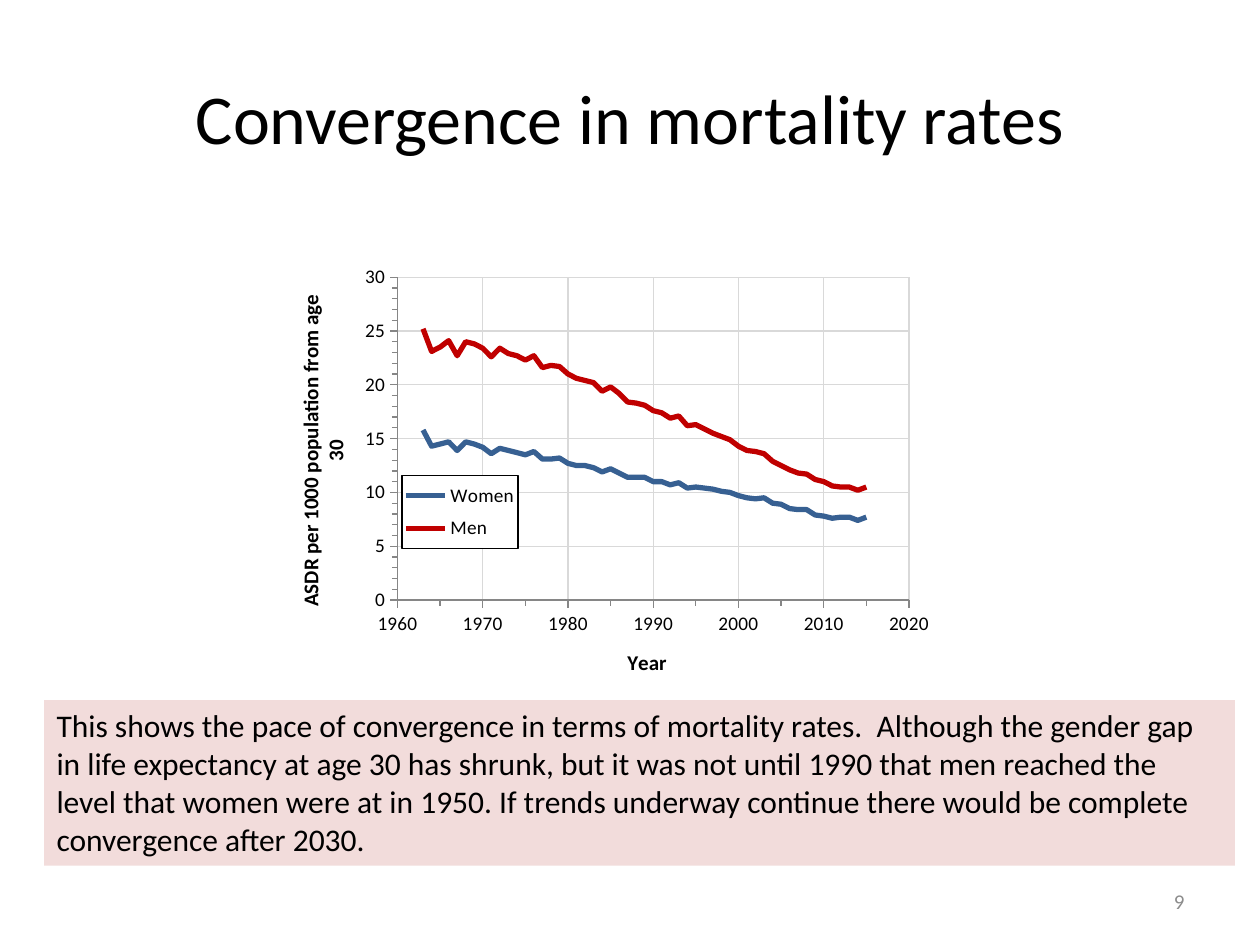
from dataclasses import dataclass

from lxml import etree
from pptx import Presentation
from pptx import util as u
from pptx.chart.data import XyChartData
from pptx.dml.color import RGBColor
from pptx.enum import chart as ch, shapes, text
from pptx.oxml import parse_xml
from pptx.oxml.ns import qn

W, H = 10, 7.5
FONT = "Calibri"
BLACK, GRID, AXIS = "000000", "D9D9D9", "868686"
FIRST_YEAR = 1963
NS = ('xmlns:c="http://schemas.openxmlformats.org/drawingml/2006/chart" '
      'xmlns:a="http://schemas.openxmlformats.org/drawingml/2006/main"')


@dataclass
class Box:
    """A place given as shares of the slide or of the chart."""
    x: float
    y: float
    w: float
    h: float

    def emu(self) -> list:
        sizes = (self.x * W, self.y * H, self.w * W, self.h * H)
        return [u.Inches(v) for v in sizes]


@dataclass
class Line:
    name: str
    color: str
    rates: list


@dataclass
class Scale:
    title: str
    low: float
    high: float
    major: float
    minor: float
    turn: int = 0


LINES = [
    Line("Women", "376092", [
        15.8, 14.3, 14.5, 14.7, 13.9, 14.7, 14.5, 14.2, 13.6, 14.1, 13.9,
        13.7, 13.5, 13.8, 13.1, 13.1, 13.2, 12.7, 12.5, 12.5, 12.3, 11.9,
        12.2, 11.8, 11.4, 11.4, 11.4, 11, 11, 10.7, 10.9, 10.4, 10.5, 10.4,
        10.3, 10.1, 10, 9.7, 9.5, 9.4, 9.5, 9, 8.9, 8.5, 8.4, 8.4, 7.9, 7.8,
        7.6, 7.7, 7.7, 7.4, 7.7]),
    Line("Men", "C00000", [
        25.2, 23.1, 23.5, 24.1, 22.7, 24, 23.8, 23.4, 22.6, 23.4, 22.9, 22.7,
        22.3, 22.7, 21.6, 21.8, 21.7, 21, 20.6, 20.4, 20.2, 19.4, 19.8, 19.2,
        18.4, 18.3, 18.1, 17.6, 17.4, 16.9, 17.1, 16.2, 16.3, 15.9, 15.5,
        15.2, 14.9, 14.3, 13.9, 13.8, 13.6, 12.9, 12.5, 12.1, 11.8, 11.7,
        11.2, 11, 10.6, 10.5, 10.5, 10.2, 10.5]),
]


def rgb(color: str) -> RGBColor:
    return RGBColor.from_string(color)


def set_font(font, size: float, color: str = BLACK, bold: bool = False) -> None:
    font.name, font.size, font.bold = FONT, u.Pt(size), bold
    font.color.rgb = rgb(color)


def add_text(s, box: Box, words: str, *, size: float, color: str = BLACK,
             fill: str = "", align=text.PP_ALIGN.LEFT,
             anchor=text.MSO_ANCHOR.MIDDLE) -> None:
    sp = s.shapes.add_shape(shapes.MSO_SHAPE.RECTANGLE, *box.emu()) \
        if fill else s.shapes.add_textbox(*box.emu())
    if fill:
        sp.shadow.inherit = False
        sp.fill.solid()
        sp.fill.fore_color.rgb = rgb(fill)
        sp.line.fill.background()
    tf = sp.text_frame
    tf.word_wrap, tf.vertical_anchor = True, anchor
    p = tf.paragraphs[0]
    p.alignment = align
    r = p.add_run()
    r.text = words
    set_font(r.font, size, color)


def layout(box: Box, inner: bool = False):
    """Manual chart layout, in shares of the chart."""
    target = '<c:layoutTarget val="inner"/>' if inner else ""
    modes = "".join(f'<c:{k}Mode val="edge"/>' for k in "xy")
    sizes = "".join(f'<c:{k} val="{getattr(box, k)}"/>' for k in "xywh")
    return parse_xml(f"<c:layout {NS}><c:manualLayout>{target}{modes}{sizes}"
                     "</c:manualLayout></c:layout>")


def style_axis(axis, scale: Scale) -> None:
    axis.minimum_scale, axis.maximum_scale = scale.low, scale.high
    axis.major_unit, axis.minor_unit = scale.major, scale.minor
    axis.major_tick_mark = axis.minor_tick_mark = ch.XL_TICK_MARK.OUTSIDE
    axis.has_major_gridlines = True
    for line, color in ((axis.major_gridlines.format.line, GRID),
                        (axis.format.line, AXIS)):
        line.color.rgb, line.width = rgb(color), u.Pt(0.75)
    labels = axis.tick_labels
    labels.number_format, labels.number_format_is_linked = "General", False
    set_font(labels.font, 11)
    tf = axis.axis_title.text_frame
    r = tf.paragraphs[0].add_run()
    r.text = scale.title
    set_font(r.font, 12, bold=True)
    body = tf._txBody.find(qn("a:bodyPr"))
    body.set("rot", str(scale.turn * 60000))
    body.set("vert", "horz")


def style_legend(chart, box: Box) -> None:
    chart.has_legend = True
    legend = chart.legend
    legend.position = ch.XL_LEGEND_POSITION.RIGHT
    legend.include_in_layout = False
    set_font(legend.font, 11)
    el = legend._element
    for old in el.findall(qn("c:layout")):
        el.remove(old)
    el.find(qn("c:legendPos")).addnext(layout(box))
    el.find(qn("c:txPr")).addprevious(parse_xml(
        f'<c:spPr {NS}><a:solidFill><a:srgbClr val="FFFFFF"/></a:solidFill>'
        f'<a:ln w="9525"><a:solidFill><a:srgbClr val="{BLACK}"/></a:solidFill>'
        "</a:ln></c:spPr>"))


def add_rates(s, box: Box) -> None:
    data = XyChartData()
    for line in LINES:
        series = data.add_series(line.name)
        for year, rate in enumerate(line.rates, FIRST_YEAR):
            series.add_data_point(year, rate)
    kind = ch.XL_CHART_TYPE.XY_SCATTER_LINES_NO_MARKERS
    chart = s.shapes.add_chart(kind, *box.emu(), data).chart
    set_font(chart.font, 10)
    chart.has_title = False
    plot = chart.plots[0]
    plot.vary_by_categories = False
    for series, line in zip(plot.series, LINES):
        series.smooth = False
        series.marker.style = ch.XL_MARKER_STYLE.NONE
        series.format.line.color.rgb = rgb(line.color)
        series.format.line.width = u.Pt(3)
    style_axis(chart.category_axis, Scale("Year", 1960, 2020, 10, 5))
    style_axis(chart.value_axis, Scale(
        "ASDR per 1000 population from age 30", 0, 30, 5, 1, turn=-90))
    style_legend(chart, Box(0.17, 0.51, 0.18, 0.17))
    area = chart._chartSpace.find(".//" + qn("c:plotArea"))
    for old in area.findall(qn("c:layout")):
        area.remove(old)
    area.insert(0, layout(Box(0.163, 0.051, 0.793, 0.748), inner=True))


def main() -> None:
    prs = Presentation()
    prs.slide_width, prs.slide_height = u.Inches(W), u.Inches(H)
    s = prs.slides.add_slide(prs.slide_layouts[6])

    # Title
    add_text(s, Box(0.05, 0.04, 0.9, 0.167), "Convergence in mortality rates",
             size=40, align=text.PP_ALIGN.CENTER)
    # Mortality rates by year
    add_rates(s, Box(0.232, 0.27, 0.512, 0.457))
    # Comment band
    add_text(s, Box(0.035, 0.741, 0.945, 0.175),
             "This shows the pace of convergence in terms of mortality rates.  "
             "Although the gender gap in life expectancy at age 30 has shrunk, "
             "but it was not until 1990 that men reached the level that women "
             "were at in 1950. If trends underway continue there would be "
             "complete convergence after 2030.",
             size=18, fill="F2DCDB", anchor=text.MSO_ANCHOR.TOP)
    # Page number
    add_text(s, Box(0.717, 0.927, 0.233, 0.053), "9", size=12, color="8C8C8C",
             align=text.PP_ALIGN.RIGHT)
    prs.save("out.pptx")


if __name__ == "__main__":
    main()
